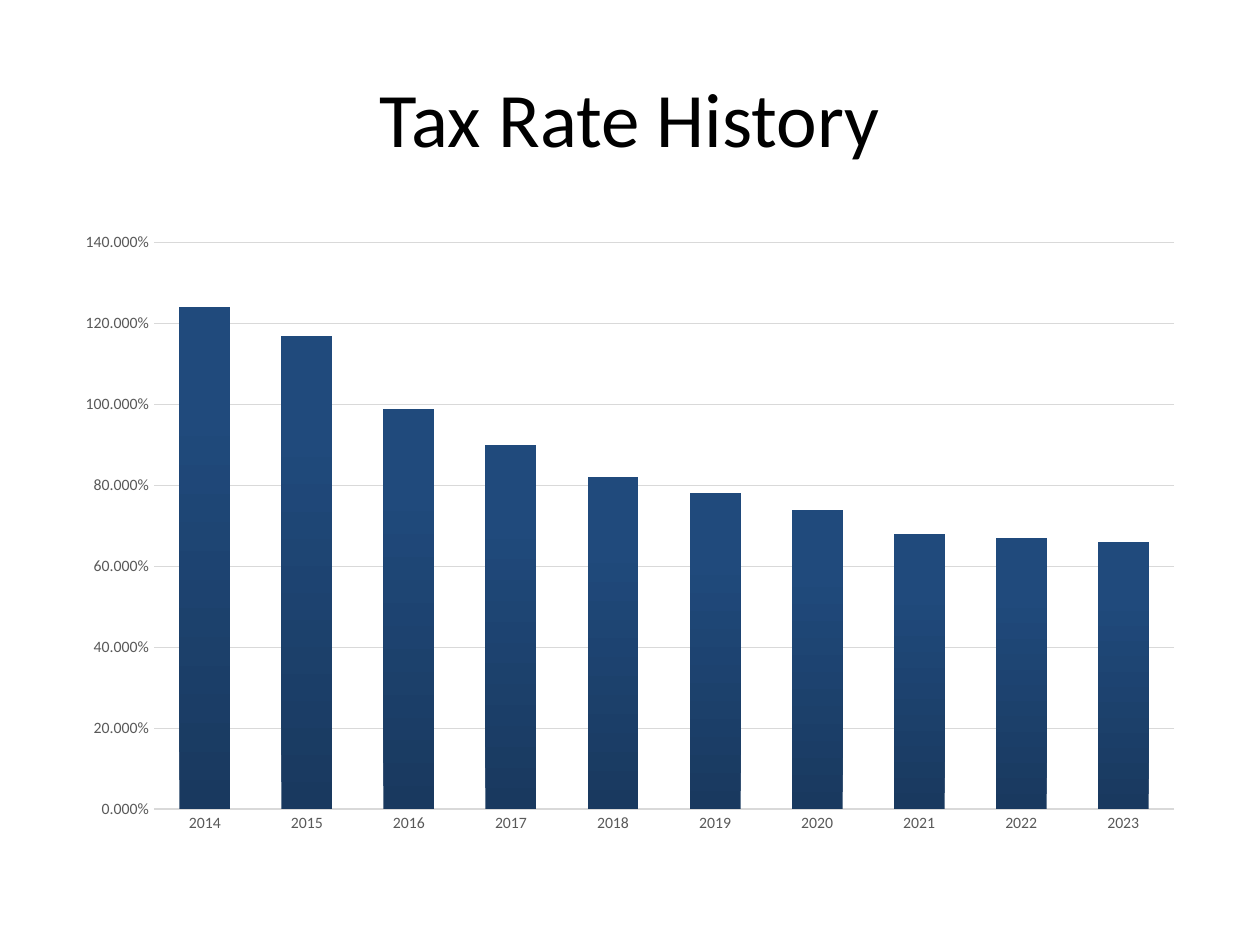
import copy
from dataclasses import dataclass

import pptx
import pptx.chart.data
import pptx.dml.color
import pptx.enum.chart
import pptx.enum.text
import pptx.oxml.ns
import pptx.util

PX_PER_INCH = 126
TITLE_ONLY = 5

YEARS = [str(year) for year in range(2014, 2024)]
TAX_RATES = [1.24, 1.17, 0.99, 0.9, 0.82, 0.78, 0.74, 0.68, 0.67, 0.66]


@dataclass(frozen=True)
class Theme:
    font: str = "Calibri"
    title_size: int = 44
    chart_size: int = 10
    axis_size: int = 9
    text: str = "000000"
    axis_text: str = "595959"
    rule: str = "D9D9D9"
    bar_stops: tuple = ((0, "19395F"), (0.8, "204A7C"), (1, "1E4A7E"))


def px(length):
    return pptx.util.Emu(round(length * 914400 / PX_PER_INCH))


def rgb(code):
    return pptx.dml.color.RGBColor.from_string(code)


def style_font(font, name, size, color):
    font.name = name
    font.size = pptx.util.Pt(size)
    font.color.rgb = rgb(color)


def write_text(frame, text, *, font, size, color, align):
    para = frame.paragraphs[0]
    para.alignment = align
    span = para.add_run()
    span.text = text
    style_font(span.font, font, size, color)


class SlideBuilder:
    def __init__(self, page, theme):
        self.page = page
        self.theme = theme

    def title(self, text, left, top, width, height):
        box = self.page.shapes.title
        box.left, box.top = px(left), px(top)
        box.width, box.height = px(width), px(height)
        box.text_frame.vertical_anchor = pptx.enum.text.MSO_ANCHOR.MIDDLE
        write_text(box.text_frame, text, font=self.theme.font,
                   size=self.theme.title_size, color=self.theme.text,
                   align=pptx.enum.text.PP_ALIGN.CENTER)

    def column_chart(self, categories, values, left, top, width, height):
        data = pptx.chart.data.CategoryChartData(number_format="0.000%")
        data.categories = categories
        data.add_series("Series 1", values)
        chart = self.page.shapes.add_chart(
            pptx.enum.chart.XL_CHART_TYPE.COLUMN_CLUSTERED,
            px(left), px(top), px(width), px(height), data).chart
        chart.has_legend = False
        chart.has_title = False
        style_font(chart.font, self.theme.font, self.theme.chart_size, self.theme.text)

        plot = chart.plots[0]
        plot.gap_width = 100
        plot.overlap = -24
        plot.vary_by_categories = False
        self.gradient_bars(plot.series[0])
        self.axes(chart)

    def gradient_bars(self, series):
        """Fill the bars with the theme's stops, running from bottom to top."""
        series.invert_if_negative = False
        fill = series.format.fill
        fill.gradient()
        fill.gradient_angle = 90
        stop_list = series._element.find(".//" + pptx.oxml.ns.qn("a:gsLst"))
        stop_list.append(copy.deepcopy(stop_list[-1]))
        for stop, (position, color) in zip(fill.gradient_stops, self.theme.bar_stops):
            stop.position = position
            stop.color.rgb = rgb(color)
        series.format.line.fill.background()

    def axes(self, chart):
        for axis in (chart.category_axis, chart.value_axis):
            axis.major_tick_mark = pptx.enum.chart.XL_TICK_MARK.NONE
            axis.minor_tick_mark = pptx.enum.chart.XL_TICK_MARK.NONE
            style_font(axis.tick_labels.font, self.theme.font,
                       self.theme.axis_size, self.theme.axis_text)
        self.rule(chart.category_axis.format.line, 1)

        rates = chart.value_axis
        rates.minimum_scale, rates.maximum_scale, rates.major_unit = 0, 1.4, 0.2
        rates.tick_labels.number_format = "0.000%"
        rates.tick_labels.number_format_is_linked = False
        rates.format.line.fill.background()
        rates.has_major_gridlines = True
        self.rule(rates.major_gridlines.format.line, 0.75)

    def rule(self, line, width):
        line.color.rgb = rgb(self.theme.rule)
        line.width = pptx.util.Pt(width)


def main():
    deck = pptx.Presentation()
    deck.slide_width, deck.slide_height = px(1260), px(945)
    page = deck.slides.add_slide(deck.slide_layouts[TITLE_ONLY])
    builder = SlideBuilder(page, Theme())
    builder.title("Tax Rate History", 63, 38, 1134, 158)
    builder.column_chart(YEARS, TAX_RATES, 63, 221, 1134, 624)
    deck.save("out.pptx")


if __name__ == "__main__":
    main()
